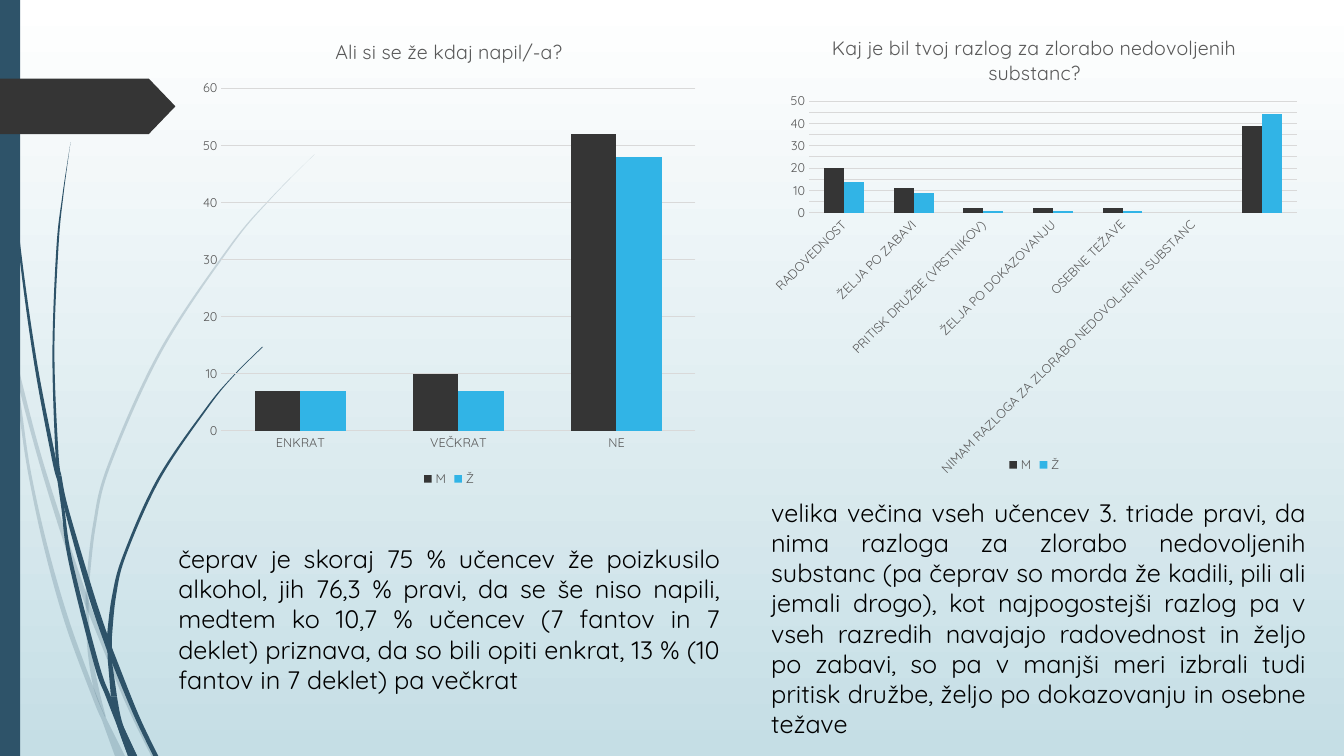
from pptx import Presentation
from pptx.chart.data import CategoryChartData
from pptx.dml.color import RGBColor
from pptx.enum.chart import XL_CHART_TYPE, XL_LEGEND_POSITION, XL_TICK_MARK
from pptx.enum.shapes import MSO_SHAPE
from pptx.enum.text import MSO_AUTO_SIZE, PP_ALIGN
from pptx.oxml.ns import qn
from pptx.util import Inches, Pt
from lxml.etree import SubElement

FONT = "Quicksand"
NAVY, CHARCOAL, SKY = "2E5369", "353535", "31B4E6"
GRAY, GRID = "595959", "D9D9D9"
UNITS_PER_INCH = 1000

FADED_WISPS = [
    ([(2.82, 0, 0), (2.99, 0, 0.04), (3.5, 0.11, 0.14), (4.1, 0.19, 0.22), (4.7, 0.28, 0.31),
      (5.45, 0.44, 0.48), (6.2, 0.65, 0.7), (6.93, 0.92, 0.97), (7.14, 1.01, 1.06),
      (7.5, 1.14, 1.24)], (3.5, 7.14)),
    ([(3.45, 0.14, 0.14), (3.76, 0.17, 0.21), (4.49, 0.36, 0.4), (5.22, 0.58, 0.63),
      (5.99, 0.84, 0.89), (6.94, 1.23, 1.28), (7.5, 1.5, 1.55)], (5.99,)),
    ([(1.53, 3.12, 3.12), (1.97, 2.68, 2.69), (2.45, 2.27, 2.29), (3.48, 1.58, 1.61),
      (4.61, 1.07, 1.1), (5.22, 0.92, 0.95), (5.85, 0.85, 0.88), (6.1, 0.85, 0.88),
      (6.46, 0.87, 0.91), (6.83, 0.93, 0.98), (7.11, 1.04, 1.05)], (5.85, 6.1)),
]
SOLID_WISPS = [
    ([(0, 0.03, 0.04), (1.1, 0.07, 0.08), (2.33, 0.17, 0.19), (3.55, 0.33, 0.36),
      (4.53, 0.51, 0.55), (4.77, 0.57, 0.6), (5.05, 0.61, 0.64), (5.57, 0.68, 0.72),
      (6.58, 0.93, 0.98), (6.91, 1.05, 1.1), (7.22, 1.17, 1.23), (7.5, 1.27, 1.36)], (4.77, 7.22)),
    ([(1.41, 0.7, 0.7), (1.93, 0.62, 0.63), (2.45, 0.56, 0.58), (3.49, 0.52, 0.54),
      (4.5, 0.55, 0.58), (4.72, 0.58, 0.61), (5.05, 0.64, 0.68), (5.92, 0.88, 0.94),
      (6.45, 1.06, 1.12), (7.08, 1.32, 1.37), (7.5, 1.52, 1.57)], (4.72, 6.45)),
    ([(3.44, 2.6, 2.61), (3.74, 2.3, 2.31), (4.05, 2.04, 2.06), (4.75, 1.56, 1.59),
      (5.51, 1.22, 1.25), (5.92, 1.11, 1.15), (6.32, 1.06, 1.11), (6.56, 1.07, 1.11),
      (6.91, 1.1, 1.16), (7.19, 1.16, 1.22), (7.5, 1.27, 1.36)], (6.32, 6.56, 6.91)),
]


def color(value):
    return RGBColor.from_string(value)


def format_font(font, size, fill):
    font.name, font.size, font.bold = FONT, Pt(size), False
    font.color.rgb = color(fill)


def write(text_frame, text, size=18, fill="000000", align=PP_ALIGN.JUSTIFY):
    paragraph = text_frame.paragraphs[0]
    paragraph.alignment = align
    run = paragraph.add_run()
    run.text = text
    format_font(run.font, size, fill)


def paint(shape, fill, opacity=100):
    shape.shadow.inherit = False
    shape.fill.solid()
    shape.fill.fore_color.rgb = color(fill)
    shape.line.fill.background()
    if opacity < 100:
        fill_color = shape.fill._xPr.find(qn("a:solidFill"))[0]
        SubElement(fill_color, qn("a:alpha")).set("val", str(opacity * 1000))


def split_at_joints(rows, joints):
    heights = [row[0] for row in rows]
    cuts = [0, *(heights.index(joint) for joint in joints), len(rows) - 1]
    return [rows[start:end + 1] for start, end in zip(cuts, cuts[1:])]


def curve_edges(shape, edge_length):
    outline = next(shape._element.iter(qn("a:path")))
    points = [(int(point.get("x")), int(point.get("y"))) for point in outline.iter(qn("a:pt"))]
    for end, segment in enumerate(outline.findall(qn("a:lnTo")), start=1):
        if end == edge_length:
            continue
        first = end // edge_length * edge_length
        last = first + edge_length - 1
        before, after = max(end - 2, first), min(end + 1, last)
        start_control = [b + (c - a) / 6 for a, b, c
                         in zip(points[before], points[end - 1], points[end])]
        end_control = [b - (c - a) / 6 for a, b, c
                       in zip(points[end - 1], points[end], points[after])]
        segment.clear()
        curve = SubElement(outline, qn("a:cubicBezTo"))
        for x, y in (start_control, end_control, points[end]):
            point = SubElement(curve, qn("a:pt"))
            point.set("x", str(round(x)))
            point.set("y", str(round(y)))
        outline.replace(segment, curve)


def add_wisp(slide, rows, opacity):
    edges = [(left, y) for y, left, right in rows]
    edges += [(right, y) for y, left, right in reversed(rows)]
    points = [(round(x * UNITS_PER_INCH), round(y * UNITS_PER_INCH)) for x, y in edges]
    builder = slide.shapes.build_freeform(*points[0], scale=Inches(1) / UNITS_PER_INCH)
    builder.add_line_segments(points[1:], close=True)
    shape = builder.convert_to_shape()
    curve_edges(shape, len(rows))
    paint(shape, NAVY, opacity)


def add_decoration(slide, height):
    fill = slide.background.fill
    fill.gradient()
    fill.gradient_angle = 270
    for stop, value in zip(fill.gradient_stops, ("FFFFFF", "C5DEE5")):
        stop.color.rgb = color(value)
    for wisps, opacity in ((FADED_WISPS, 20), (SOLID_WISPS, 100)):
        for rows, joints in wisps:
            for part in split_at_joints(rows, joints):
                add_wisp(slide, part, opacity)
    side_bar = slide.shapes.add_shape(MSO_SHAPE.RECTANGLE, 0, 0, Inches(0.2), height)
    paint(side_bar, NAVY)
    tab = slide.shapes.add_shape(MSO_SHAPE.PENTAGON, 0, Inches(0.78), Inches(1.74), Inches(0.55))
    tab.adjustments[0] = 0.48
    paint(tab, CHARCOAL)


def add_survey_chart(slide, box, title, categories, series, maximum, unit, label_angle=0):
    data = CategoryChartData()
    data.categories = categories
    for name, values in series:
        data.add_series(name, values)
    frame = slide.shapes.add_chart(XL_CHART_TYPE.COLUMN_CLUSTERED, *map(Inches, box), data)
    chart = frame.chart
    format_font(chart.font, 10, "000000")
    chart.has_title = True
    write(chart.chart_title.text_frame, title, size=14, fill=GRAY, align=PP_ALIGN.CENTER)
    chart.chart_title.include_in_layout = False
    chart.has_legend = True
    chart.legend.position = XL_LEGEND_POSITION.BOTTOM
    chart.legend.include_in_layout = False
    format_font(chart.legend.font, 9, GRAY)

    plot = chart.plots[0]
    plot.gap_width, plot.overlap, plot.vary_by_categories = 150, 0, False
    for column, fill in zip(plot.series, (CHARCOAL, SKY)):
        column.format.fill.solid()
        column.format.fill.fore_color.rgb = color(fill)

    for axis in (chart.category_axis, chart.value_axis):
        axis.major_tick_mark = axis.minor_tick_mark = XL_TICK_MARK.NONE
        axis.format.line.fill.background()
        format_font(axis.tick_labels.font, 9, GRAY)
    value_axis = chart.value_axis
    value_axis.minimum_scale, value_axis.maximum_scale = 0, maximum
    value_axis.major_unit = unit
    grid_line = value_axis.major_gridlines.format.line
    grid_line.width = Pt(0.75)
    grid_line.color.rgb = color(GRID)
    if label_angle:
        body = chart.category_axis._element.find(qn("c:txPr")).find(qn("a:bodyPr"))
        body.set("rot", str(label_angle * 60000))


def add_comment(slide, box, text):
    text_frame = slide.shapes.add_textbox(*map(Inches, box)).text_frame
    text_frame.word_wrap = True
    text_frame.auto_size = MSO_AUTO_SIZE.SHAPE_TO_FIT_TEXT
    write(text_frame, text)


def main():
    presentation = Presentation()
    presentation.slide_width, presentation.slide_height = Inches(13.33), Inches(7.5)
    slide = presentation.slides.add_slide(presentation.slide_layouts[6])
    add_decoration(slide, presentation.slide_height)
    add_survey_chart(
        slide, (1.91, 0.19, 5.09, 4.68), "Ali si se že kdaj napil/-a?",
        ["ENKRAT", "VEČKRAT", "NE"],
        [("M", (7, 10, 52)), ("Ž", (7, 7, 48))], maximum=60, unit=10)
    add_comment(
        slide, (1.67, 5.34, 5.57, 1.62),
        "čeprav je skoraj 75 % učencev že poizkusilo alkohol, jih 76,3 % pravi, da se še niso "
        "napili, medtem ko 10,7 % učencev (7 fantov in 7 deklet) priznava, da so bili opiti "
        "enkrat, 13 % (10 fantov in 7 deklet) pa večkrat")
    add_survey_chart(
        slide, (7.55, 0.15, 5.42, 4.58), "Kaj je bil tvoj razlog za zlorabo nedovoljenih substanc?",
        ["RADOVEDNOST", "ŽELJA PO ZABAVI", "PRITISK DRUŽBE (VRSTNIKOV)", "ŽELJA PO DOKAZOVANJU",
         "OSEBNE TEŽAVE", "NIMAM RAZLOGA ZA ZLORABO NEDOVOLJENIH SUBSTANC", ""],
        [("M", (20, 11, 2, 2, 2, None, 39)), ("Ž", (14, 9, 1, 1, 1, None, 44))],
        maximum=50, unit=5, label_angle=-45)
    add_comment(
        slide, (7.55, 4.88, 5.5, 2.52),
        "velika večina vseh učencev 3. triade pravi, da nima razloga za zlorabo nedovoljenih "
        "substanc (pa čeprav so morda že kadili, pili ali jemali drogo), kot najpogostejši razlog "
        "pa v vseh razredih navajajo radovednost in željo po zabavi, so pa v manjši meri izbrali "
        "tudi pritisk družbe, željo po dokazovanju in osebne težave")
    presentation.save("out.pptx")


if __name__ == "__main__":
    main()
